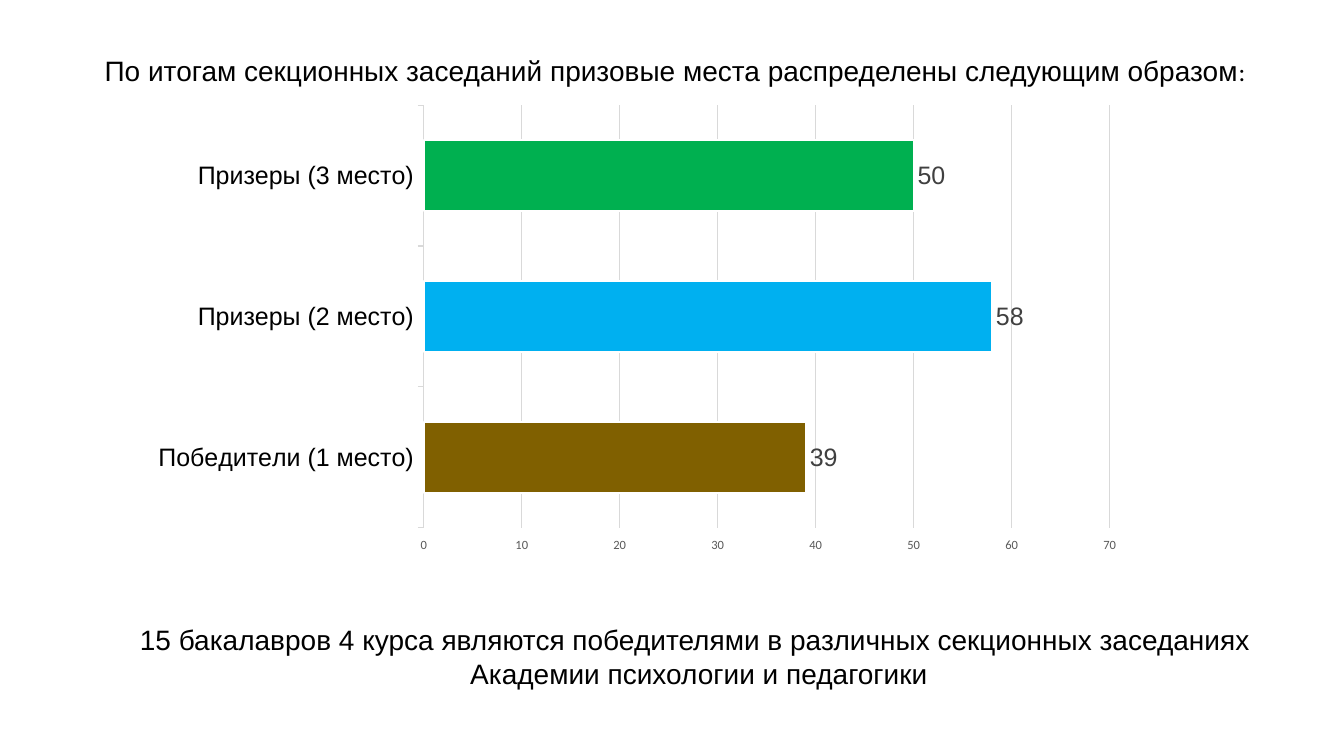
from lxml.etree import SubElement
from pptx import Presentation
from pptx.chart.data import CategoryChartData
from pptx.dml.color import RGBColor
from pptx.enum.chart import XL_CHART_TYPE as ChartType, XL_LABEL_POSITION as LabelPosition
from pptx.enum.chart import XL_TICK_MARK as TickMark
from pptx.enum.text import MSO_ANCHOR as Anchor, MSO_AUTO_SIZE as AutoSize, PP_ALIGN as Align
from pptx.oxml.ns import qn
from pptx.util import Cm, Pt

PRIZES = [
    ("Победители (1 место)", 39, "806000"),
    ("Призеры (2 место)", 58, "00B0F0"),
    ("Призеры (3 место)", 50, "00B050"),
]
HEADING = "По итогам секционных заседаний призовые места распределены следующим образом"
SUMMARY = [
    "15 бакалавров 4 курса являются победителями в различных секционных заседаниях ",
    "Академии психологии и педагогики",
]


def color(value):
    """Turn a hex string into a colour."""
    return RGBColor.from_string(value)


def set_font(font, size, name, hex_color):
    """Set the size, typeface and colour of a font."""
    font.size = Pt(size)
    font.name = name
    font.color.rgb = color(hex_color)


def set_line(line, hex_color, width):
    """Set the colour and width of a line."""
    line.color.rgb = color(hex_color)
    line.width = Pt(width)


def prepare_frame(frame):
    """Let a text frame grow around unwrapped lines."""
    frame.word_wrap = False
    frame.auto_size = AutoSize.SHAPE_TO_FIT_TEXT
    frame.vertical_anchor = Anchor.TOP


def center(paragraph):
    """Centre a paragraph with single spacing and a slight left margin."""
    paragraph.alignment = Align.CENTER
    paragraph.line_spacing = 1.0
    paragraph.space_before = Pt(0)
    properties = paragraph._p.get_or_add_pPr()
    properties.set("marL", str(Cm(0.13)))
    properties.set("indent", "0")


def add_heading(slide, left, top, width, height):
    """Place the title, whose colon has its own font."""
    title = slide.shapes.title
    title.left, title.top, title.width, title.height = left, top, width, height
    prepare_frame(title.text_frame)
    paragraph = title.text_frame.paragraphs[0]
    center(paragraph)
    for text, size, name in [(HEADING, 20, "Arial"), (":", 18, "Calibri")]:
        run = paragraph.add_run()
        run.text = text
        set_font(run.font, size, name, "000000")


def set_plot_layout(chart, x, y, w, h):
    """Fix the inner plot area as fractions of the chart."""
    plot_area = chart._chartSpace.chart.plotArea
    layout = plot_area.find(qn("c:layout"))
    if layout is None:
        layout = SubElement(plot_area, qn("c:layout"))
        plot_area.insert(0, layout)
    manual = SubElement(layout, qn("c:manualLayout"))
    settings = [("layoutTarget", "inner"), ("xMode", "edge"), ("yMode", "edge"),
                ("x", x), ("y", y), ("w", w), ("h", h)]
    for tag, value in settings:
        SubElement(manual, qn(f"c:{tag}")).set("val", str(value))


def add_prize_chart(slide, left, top, width, height):
    """Place the bar chart of prize places."""
    data = CategoryChartData()
    data.categories = [name for name, _, _ in PRIZES]
    data.add_series("Series 1", [count for _, count, _ in PRIZES])
    chart = slide.shapes.add_chart(
        ChartType.BAR_CLUSTERED, left, top, width, height, data).chart
    chart.has_legend = False
    chart.has_title = False
    set_font(chart.font, 10, "Calibri", "000000")
    set_plot_layout(chart, 0.25, 0.025, 0.67, 0.92)

    category_axis = chart.category_axis
    category_axis.major_tick_mark = TickMark.OUTSIDE
    set_font(category_axis.tick_labels.font, 18, "Arial", "000000")
    set_line(category_axis.format.line, "D9D9D9", 0.75)

    value_axis = chart.value_axis
    value_axis.minimum_scale, value_axis.maximum_scale, value_axis.major_unit = 0, 70, 10
    value_axis.major_tick_mark = TickMark.OUTSIDE
    value_axis.format.line.fill.background()
    set_font(value_axis.tick_labels.font, 9, "Calibri", "595959")
    set_line(value_axis.major_gridlines.format.line, "D9D9D9", 0.75)

    plot = chart.plots[0]
    plot.gap_width = 100
    plot.vary_by_categories = False
    series = plot.series[0]
    for index, (_, _, fill) in enumerate(PRIZES):
        point_format = series.points[index].format
        point_format.fill.solid()
        point_format.fill.fore_color.rgb = color(fill)
        set_line(point_format.line, "FFFFFF", 1.5)
    labels = series.data_labels
    labels.show_value = True
    labels.position = LabelPosition.OUTSIDE_END
    set_font(labels.font, 18, "Arial", "404040")


def add_summary(slide, left, top, width, height):
    """Place the closing statement under the chart."""
    frame = slide.shapes.add_textbox(left, top, width, height).text_frame
    prepare_frame(frame)
    for index, text in enumerate(SUMMARY):
        paragraph = frame.add_paragraph() if index else frame.paragraphs[0]
        paragraph.text = text
        center(paragraph)
        set_font(paragraph.font, 20, "Arial", "000000")


def main():
    """Build and save the presentation."""
    presentation = Presentation()
    presentation.slide_width, presentation.slide_height = Cm(33.87), Cm(19.05)
    slide = presentation.slides.add_slide(presentation.slide_layouts[5])
    add_heading(slide, Cm(2.16), Cm(1.22), Cm(29.57), Cm(1.12))
    add_prize_chart(slide, Cm(3.99), Cm(2.36), Cm(26.04), Cm(11.58))
    add_summary(slide, Cm(3.05), Cm(15.57), Cm(29), Cm(1.96))
    presentation.save("out.pptx")


if __name__ == "__main__":
    main()
